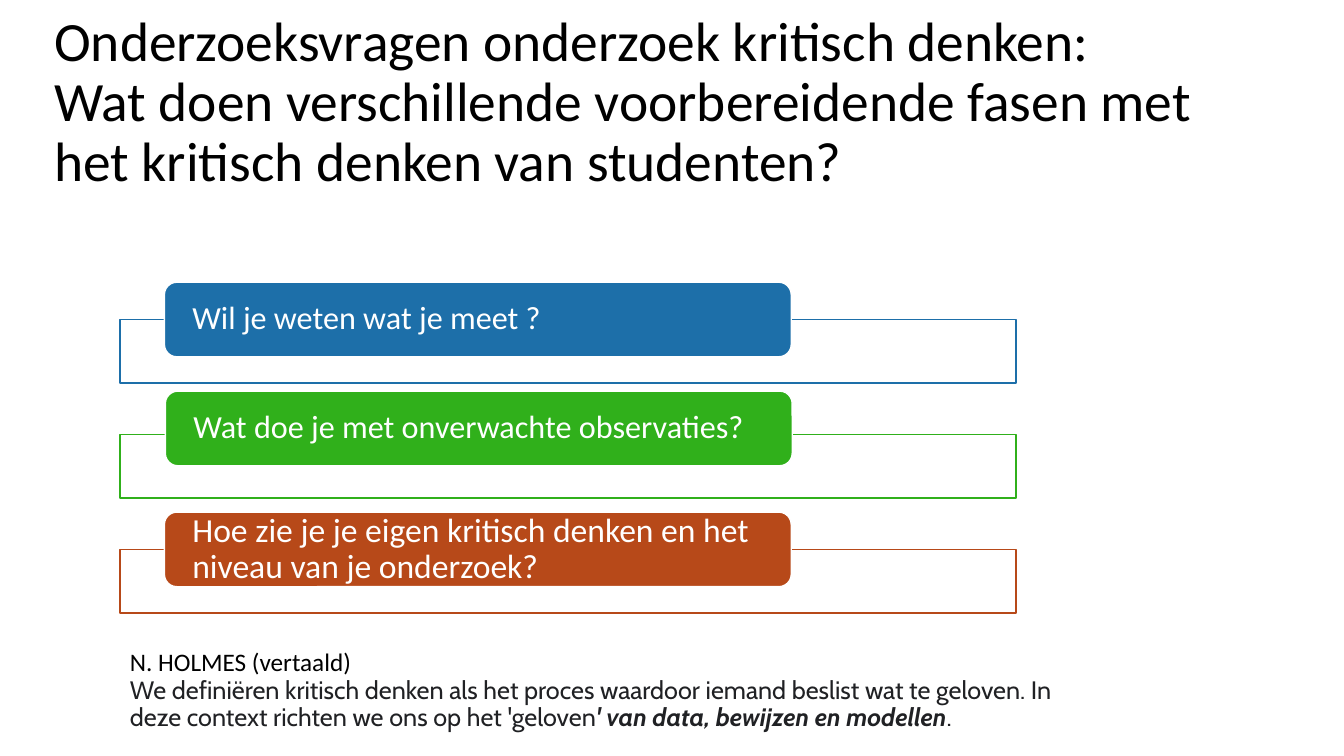
import pptx
import pptx.util
import pptx.dml.color
import pptx.enum.shapes
import pptx.enum.text
import pptx.oxml.ns
import lxml.etree

Pt = pptx.util.Pt
Kind = pptx.enum.shapes.MSO_SHAPE
Anchor = pptx.enum.text.MSO_ANCHOR
Align = pptx.enum.text.PP_ALIGN

HUES = {
    "black": "000000",
    "white": "FFFFFF",
    "ink": "202124",
    "blue": "1D6FA9",
    "green": "30B01B",
    "rust": "B74919",
}

TITLE = ("Onderzoeksvragen onderzoek kritisch denken:\v"
         "Wat doen verschillende voorbereidende fasen met "
         "het kritisch denken van studenten?")

ASKS = [
    ("Wil je weten wat je meet ?", "blue", 23, 117.4, 201.6),
    ("Wat doe je met onverwachte observaties?", "green", 23, 118.1, 279.4),
    ("Hoe zie je je eigen kritisch denken en het niveau van je onderzoek?",
     "rust", 24, 117.4, 365.8),
]

QUOTE = [
    ("N. HOLMES (vertaald)\v", {"hue": "black", "face": "Calibri"}),
    ("We definiëren kritisch denken als het proces waardoor iemand beslist "
     "wat te geloven. In deze context richten we ons op het 'geloven", {}),
    ("' van data, bewijzen en modellen", {"bold": True}),
    (".", {}),
]


def color(hue):
    return pptx.dml.color.RGBColor.from_string(HUES[hue])


def write(par, text, size=18, hue="ink", face="Cabin", bold=False):
    parts = text.split("\v")
    for spot, part in enumerate(parts):
        if spot:
            par.add_line_break()
        if part:
            run = par.add_run()
            run.text = part
            font = run.font
            font.size, font.name = Pt(size), face
            font.bold = font.italic = bold
            font.color.rgb = color(hue)


def setup(frame, anchor, pad_x, pad_y):
    frame.word_wrap = True
    frame.vertical_anchor = anchor
    frame.margin_left = frame.margin_right = Pt(pad_x)
    frame.margin_top = frame.margin_bottom = Pt(pad_y)
    par = frame.paragraphs[0]
    par.line_spacing = 0.9
    par.alignment = Align.LEFT
    return par


def block(slide, kind, box, fill, line):
    shape = slide.shapes.add_shape(kind, *map(Pt, box))
    shape.shadow.inherit = False
    shape.fill.solid()
    shape.fill.fore_color.rgb = color(fill)
    shape.line.color.rgb = color(line)
    shape.line.width = Pt(1)
    return shape


def main():
    deck = pptx.Presentation()
    deck.slide_width, deck.slide_height = Pt(960), Pt(540)
    slide = deck.slides.add_slide(deck.slide_layouts[6])

    head = slide.shapes.add_textbox(*map(Pt, (31.7, 21.6, 828, 104.4)))
    write(setup(head.text_frame, Anchor.MIDDLE, 7.2, 3.6), TITLE,
          size=39.6, hue="black", face="Calibri")

    for row, (text, hue, size, left, top) in enumerate(ASKS):
        frame = block(slide, Kind.RECTANGLE,
                      (85.7, 228.2 + 82.1 * row, 640, 45.4), "white", hue)
        tone = frame.fill._xPr.find(".//" + pptx.oxml.ns.qn("a:srgbClr"))
        lxml.etree.SubElement(tone, pptx.oxml.ns.qn("a:alpha"), val="90000")
        pill = block(slide, Kind.ROUNDED_RECTANGLE,
                     (left, top, 447.8, 53.3), hue, "white")
        write(setup(pill.text_frame, Anchor.MIDDLE, 17.4, 0), text,
              size=size, hue="white", face="Calibri")

    note = slide.shapes.add_textbox(*map(Pt, (85.7, 460.8, 699, 66.2)))
    par = setup(note.text_frame, Anchor.TOP, 7.2, 3.6)
    par.space_after = Pt(6)
    for text, style in QUOTE:
        write(par, text, **style)

    deck.save("out.pptx")


if __name__ == "__main__":
    main()
